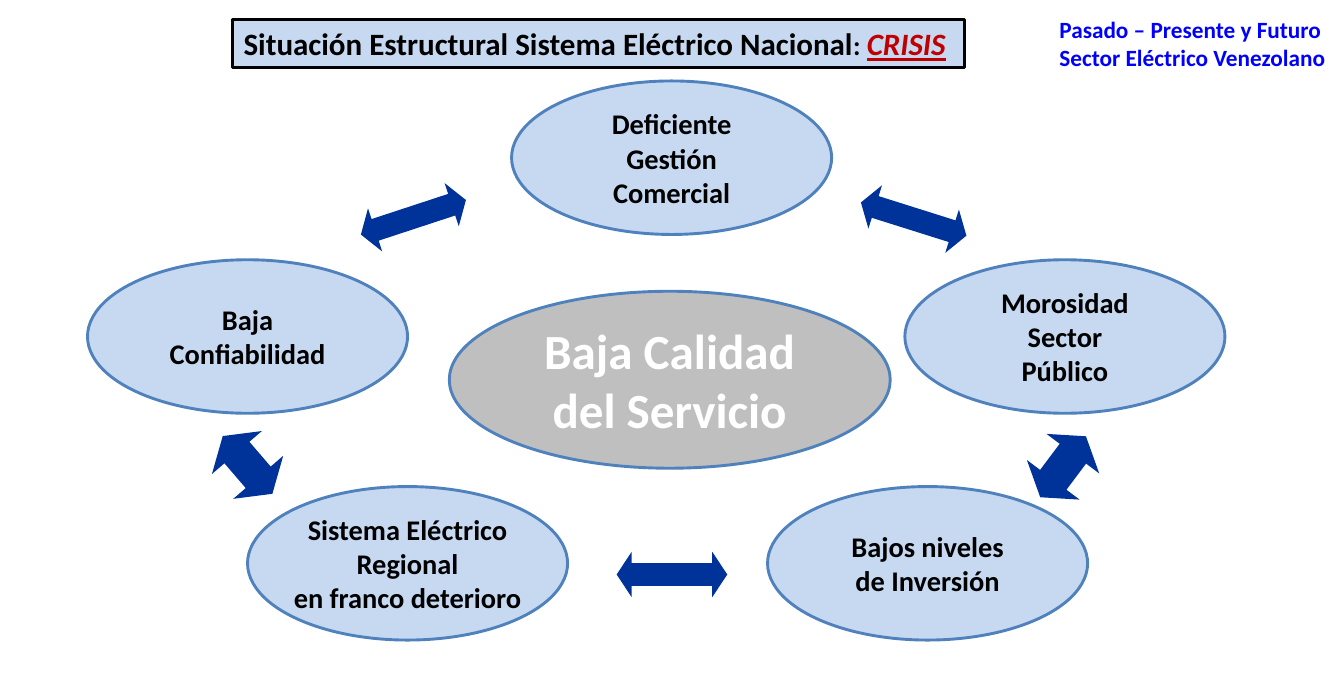
"""Build the slide on the structural crisis of the national electricity system."""
from typing import NamedTuple

from pptx import Presentation
from pptx.dml.color import RGBColor
from pptx.enum.shapes import MSO_SHAPE
from pptx.enum.text import MSO_ANCHOR, MSO_AUTO_SIZE, PP_ALIGN
from pptx.util import Cm, Pt

OVAL = MSO_SHAPE.OVAL
DOUBLE_ARROW = MSO_SHAPE.LEFT_RIGHT_ARROW
LEFT, CENTER = PP_ALIGN.LEFT, PP_ALIGN.CENTER
MIDDLE, TOP = MSO_ANCHOR.MIDDLE, MSO_ANCHOR.TOP
FIXED = MSO_AUTO_SIZE.NONE
TITLE_ONLY = 5

FONT = "Calibri"
PALE_BLUE, EDGE_BLUE, NAVY, BRIGHT_BLUE = "C6D9F1", "4F81BD", "003399", "0000FF"
GREY, BLACK, WHITE, RED = "BFBFBF", "000000", "FFFFFF", "C00000"

CAUSE_SIZE = (8.74, 4.19)
LONG_ARROW, SHORT_ARROW = (3.02, 1.24), (2.08, 1.8)


class Cause(NamedTuple):
    left: float
    top: float
    lines: list[str]


class Link(NamedTuple):
    left: float
    top: float
    size: tuple[float, float]
    angle: float


CAUSES = [
    Cause(24.71, 7.09, ["Morosidad", "Sector", "Público"]),
    Cause(2.39, 7.09, ["Baja", "Confiabilidad"]),
    Cause(6.76, 13.28, ["Sistema Eléctrico", "Regional", "en franco deterioro"]),
    Cause(20.96, 13.28, ["Bajos niveles", "de Inversión"]),
    Cause(13.97, 2.21, ["Deficiente", "Gestión", "Comercial"]),
]
LINKS = [
    Link(16.84, 15.06, LONG_ARROW, 0),
    Link(27.99, 11.84, SHORT_ARROW, 306.9),
    Link(5.72, 11.79, SHORT_ARROW, 49.3),
    Link(9.78, 5.31, LONG_ARROW, 341.8),
    Link(23.44, 5.36, LONG_ARROW, 17.5),
]


def color(code: str) -> RGBColor:
    return RGBColor.from_string(code)


def paint(shape, fill: str, line: str = "") -> None:
    shape.fill.solid()
    shape.fill.fore_color.rgb = color(fill)
    if line:
        shape.line.color.rgb = color(line)
        shape.line.width = Pt(2.25)
    else:
        shape.line.fill.background()


def add_span(para, text: str, *, size: float, ink: str = BLACK,
             italic: bool = False, underline: bool = False) -> None:
    span = para.add_run()
    span.text = text
    font = span.font
    font.name, font.size, font.bold = FONT, Pt(size), True
    font.italic, font.underline = italic, underline
    font.color.rgb = color(ink)


def set_frame(frame, *, anchor, wrap: bool, inset: tuple[float, float]) -> None:
    frame.auto_size = FIXED
    frame.word_wrap = wrap
    frame.vertical_anchor = anchor
    frame.margin_left = frame.margin_right = Cm(inset[0])
    frame.margin_top = frame.margin_bottom = Cm(inset[1])


def add_lines(frame, lines: list[str], *, size: float, ink: str, align) -> None:
    for index, text in enumerate(lines):
        para = frame.add_paragraph() if index else frame.paragraphs[0]
        para.alignment = align
        add_span(para, text, size=size, ink=ink)


def add_figure(page, kind, left: float, top: float, size: tuple[float, float]):
    shape = page.shapes.add_shape(kind, Cm(left), Cm(top), Cm(size[0]), Cm(size[1]))
    shape.shadow.inherit = False
    return shape


def add_ellipse(page, left: float, top: float, size: tuple[float, float],
                lines: list[str], *, fill: str, ink: str, points: float) -> None:
    ellipse = add_figure(page, OVAL, left, top, size)
    paint(ellipse, fill, EDGE_BLUE)
    set_frame(ellipse.text_frame, anchor=MIDDLE, wrap=False, inset=(0.3, 0.15))
    add_lines(ellipse.text_frame, lines, size=points, ink=ink, align=CENTER)


def add_link(page, link: Link) -> None:
    arrow = add_figure(page, DOUBLE_ARROW, link.left, link.top, link.size)
    arrow.adjustments[0], arrow.adjustments[1] = 0.5, 0.33
    arrow.rotation = link.angle
    paint(arrow, NAVY)


def format_title(title) -> None:
    title.left, title.top, title.width, title.height = Cm(6.35), Cm(0.53), Cm(19.99), Cm(1.32)
    paint(title, PALE_BLUE, BLACK)
    set_frame(title.text_frame, anchor=TOP, wrap=True, inset=(0.3, 0.15))
    para = title.text_frame.paragraphs[0]
    para.alignment = LEFT
    add_span(para, "Situación Estructural Sistema Eléctrico Nacional", size=24)
    add_span(para, ": ", size=21)
    add_span(para, "CRISIS", size=24, ink=RED, italic=True, underline=True)


def add_heading(page) -> None:
    box = page.shapes.add_textbox(Cm(28.68), Cm(0.3), Cm(7.87), Cm(1.8))
    set_frame(box.text_frame, anchor=TOP, wrap=False, inset=(0.25, 0.13))
    add_lines(box.text_frame, ["Pasado – Presente y Futuro", "Sector Eléctrico Venezolano"],
              size=18, ink=BRIGHT_BLUE, align=LEFT)


def main() -> None:
    deck = Presentation()
    deck.slide_width, deck.slide_height = Cm(36.7), Cm(19.05)
    page = deck.slides.add_slide(deck.slide_layouts[TITLE_ONLY])
    format_title(page.shapes.title)
    add_ellipse(page, 12.27, 7.95, (12.04, 4.83), ["Baja Calidad", "del Servicio"],
                fill=GREY, ink=WHITE, points=38)
    for cause in CAUSES:
        add_ellipse(page, cause.left, cause.top, CAUSE_SIZE, cause.lines,
                    fill=PALE_BLUE, ink=BLACK, points=22)
    for link in LINKS:
        add_link(page, link)
    add_heading(page)
    deck.save("out.pptx")


if __name__ == "__main__":
    main()
